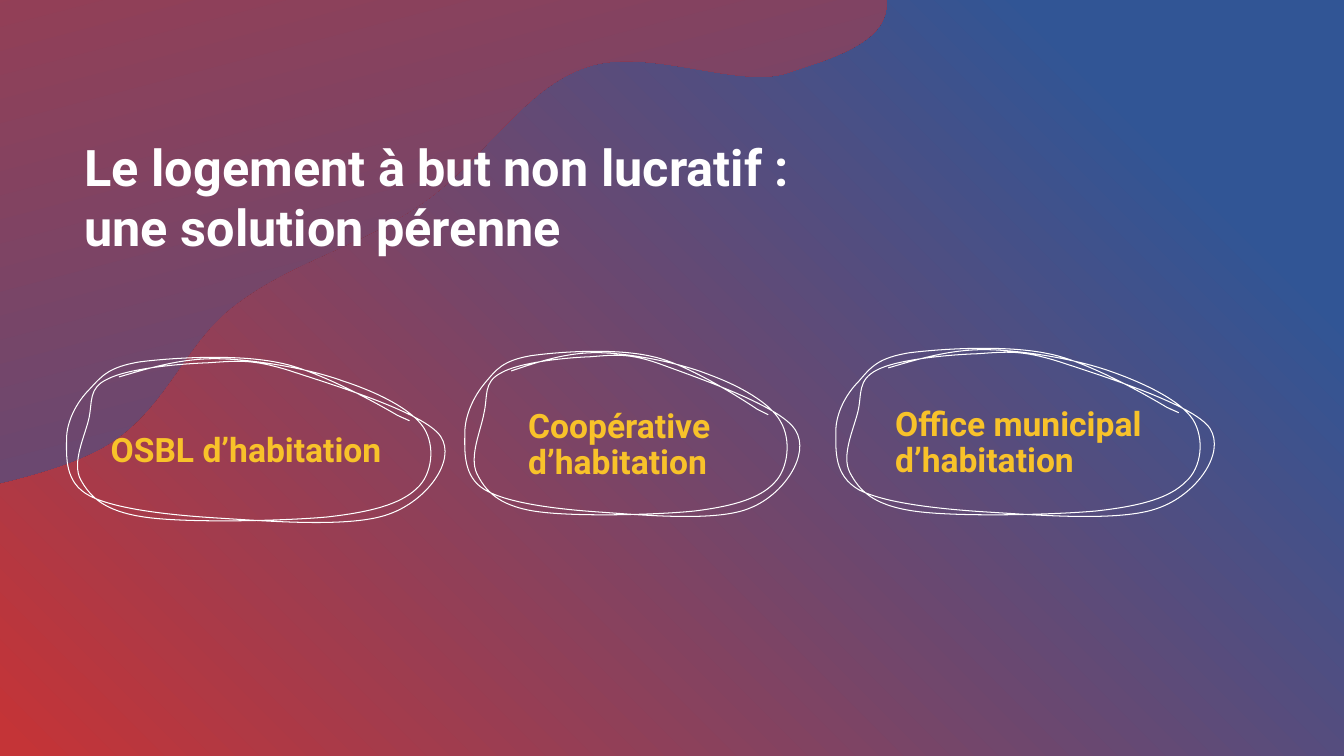
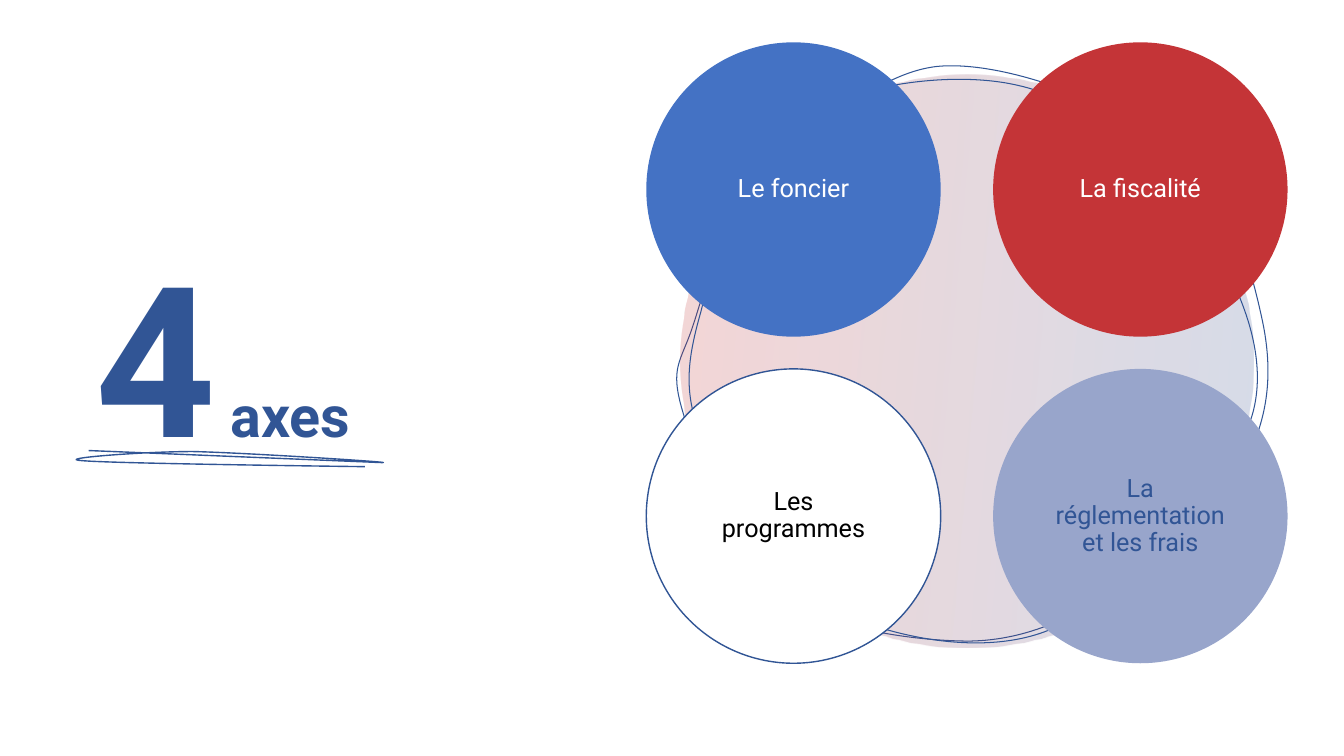
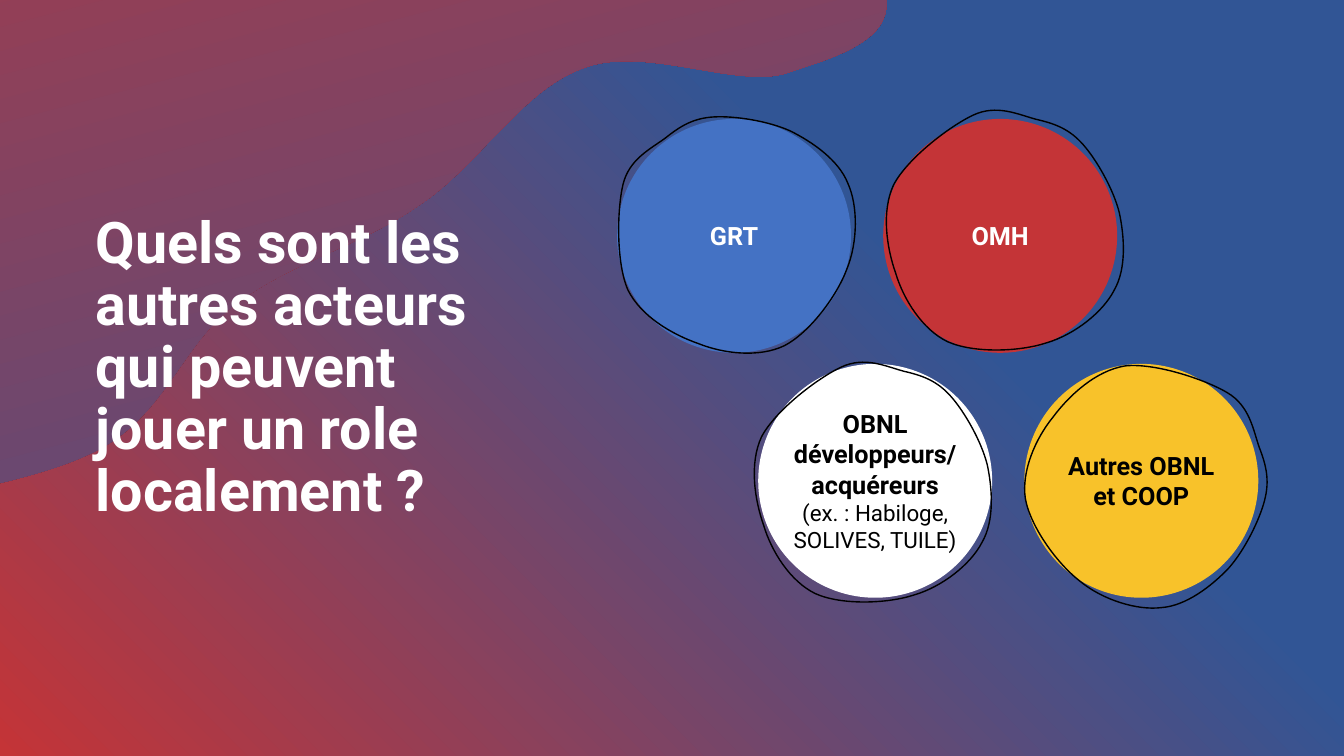
from math import cos, radians, sin

from pptx import Presentation
from pptx.dml.color import RGBColor
from pptx.enum.shapes import MSO_SHAPE
from pptx.enum.text import MSO_ANCHOR as Anchor, PP_ALIGN as Align
from pptx.oxml.ns import qn
from pptx.oxml.xmlchemy import OxmlElement
from pptx.util import Inches, Pt

NAVY = RGBColor(0x31, 0x55, 0x95)
BLUE = RGBColor(0x44, 0x72, 0xC4)
RED = RGBColor(0xC4, 0x34, 0x37)
YELLOW = RGBColor(0xF8, 0xC2, 0x2A)
LAVENDER = RGBColor(0x98, 0xA5, 0xCB)
WHITE = RGBColor(0xFF, 0xFF, 0xFF)
BLACK = RGBColor(0x00, 0x00, 0x00)
FONT = "Roboto"
PANEL = [Inches(n) for n in (0.85, 1.18, 4.97, 4.97)]

# Each outline is a start point followed by cubic curves of three points.
BLOB = [
    (-2.09, 5.08), (-1.55, 5.09), (0.15, 4.86), (0.89, 4.51),
    (1.63, 4.17), (1.78, 3.43), (2.33, 3.02), (2.88, 2.6), (3.59, 2.43), (4.17, 2.03),
    (4.75, 1.64), (5.18, 0.89), (5.79, 0.67), (6.39, 0.45), (7.33, 0.89), (7.81, 0.72),
    (8.29, 0.56), (9.13, 0.35), (8.65, -0.33), (8.18, -1.02), (6.12, -2.97), (4.98, -3.41),
    (3.85, -3.84), (3.09, -4.26), (1.87, -2.95), (0.64, -1.63), (-1.7, 3.14), (-2.36, 4.48),
    (-3.01, 5.81), (-2.63, 5.08), (-2.09, 5.08),
]
BLOB_ROTATION = 300.3
SCRIBBLE = [
    (0.53, 0.2), (0.84, 0.11), (1.16, 0.01), (1.53, 0.02), (1.9, 0.03), (2.42, 0.12), (2.75, 0.24),
    (3.09, 0.35), (3.43, 0.52), (3.55, 0.7), (3.67, 0.88), (3.64, 1.17), (3.48, 1.31),
    (3.32, 1.46), (3.04, 1.54), (2.59, 1.59), (2.14, 1.63), (1.18, 1.65), (0.78, 1.59),
    (0.37, 1.53), (0.24, 1.38), (0.15, 1.22), (0.06, 1.05), (0.19, 0.79), (0.23, 0.62),
    (0.27, 0.45), (0.22, 0.31), (0.42, 0.22), (0.61, 0.12), (1.11, 0.07), (1.41, 0.06),
    (1.71, 0.04), (1.85, 0.02), (2.23, 0.14), (2.62, 0.27), (3.56, 0.55), (3.72, 0.79),
    (3.88, 1.03), (3.58, 1.43), (3.21, 1.56), (2.84, 1.7), (2.01, 1.63), (1.51, 1.6),
    (1.02, 1.57), (0.49, 1.51), (0.24, 1.38), (-0.01, 1.25), (0.01, 1.0), (0.01, 0.82),
    (0.01, 0.64), (0.11, 0.45), (0.24, 0.32), (0.36, 0.19), (0.43, 0.1), (0.74, 0.05),
    (1.06, 0.01), (1.7, -0.03), (2.12, 0.06), (2.55, 0.14), (3.29, 0.58), (3.29, 0.58),
    (3.49, 0.67), (3.4, 0.63), (3.31, 0.59),
]
OUTER_LOOP = [
    (6.87, 3.24), (6.99, 2.88), (7.11, 2.34), (7.51, 1.91), (7.91, 1.48), (8.6, 0.74), (9.29, 0.66),
    (9.99, 0.59), (11.14, 1.06), (11.67, 1.48), (12.21, 1.9), (12.41, 2.67), (12.52, 3.18),
    (12.63, 3.7), (12.58, 4.14), (12.35, 4.58), (12.12, 5.01), (11.6, 5.51), (11.14, 5.8),
    (10.69, 6.1), (10.21, 6.35), (9.62, 6.36), (9.03, 6.36), (8.09, 6.22), (7.62, 5.84),
    (7.14, 5.46), (6.9, 4.51), (6.77, 4.08), (6.64, 3.64), (6.75, 3.6), (6.87, 3.24),
]
INNER_LOOP = [
    (6.95, 3.1), (7.09, 2.56), (7.34, 1.59), (7.87, 1.22), (8.4, 0.84), (9.45, 0.69), (10.11, 0.85),
    (10.77, 1), (11.47, 1.59), (11.85, 2.14), (12.23, 2.7), (12.64, 3.5), (12.4, 4.18),
    (12.17, 4.87), (11.14, 5.94), (10.43, 6.24), (9.73, 6.54), (8.74, 6.3), (8.16, 6),
    (7.59, 5.7), (7.19, 4.9), (6.99, 4.42), (6.78, 3.94), (6.8, 3.63), (6.95, 3.1),
]
UNDERLINE = [
    (0.88, 4.47), (0.88, 4.47), (3.79, 4.59), (3.79, 4.59), (3.96, 4.59), (2.4, 4.49), (1.91, 4.48),
    (1.41, 4.48), (0.53, 4.55), (0.81, 4.57), (1.1, 4.6), (3.62, 4.63), (3.62, 4.63),
]
RING = [
    (0.46, 0.21), (0.31, 0.32), (0.1, 0.42), (0.04, 0.67), (-0.02, 0.92), (-0.03, 1.45), (0.09, 1.72),
    (0.22, 1.98), (0.53, 2.16), (0.79, 2.25), (1.04, 2.35), (1.39, 2.39), (1.64, 2.27),
    (1.89, 2.14), (2.16, 1.78), (2.26, 1.51), (2.37, 1.24), (2.37, 0.88), (2.27, 0.66),
    (2.18, 0.43), (1.92, 0.25), (1.7, 0.14), (1.48, 0.04), (1.15, -0.01), (0.95, 0),
    (0.74, 0.01), (0.61, 0.09), (0.46, 0.21),
]


def draw_outline(slide, points, color, width, left=0, top=0, stretch_x=1, stretch_y=1):
    """Draw an unfilled curve through points given in inches from left and top."""
    spots = [(round(100 * (left + x * stretch_x)), round(100 * (top + y * stretch_y)))
             for x, y in points]
    builder = slide.shapes.build_freeform(*spots[0], scale=Inches(0.01))
    builder.add_line_segments(spots[1:], close=points[0] == points[-1])
    outline = builder.convert_to_shape()
    geometry = outline._element.find(".//" + qn("a:path"))
    segments = iter(geometry.findall(qn("a:lnTo")))
    for triple in zip(segments, segments, segments):
        curve = OxmlElement("a:cubicBezTo")
        triple[0].addprevious(curve)
        for segment in triple:
            curve.append(segment[0])
            geometry.remove(segment)
    outline.shadow.inherit = False
    outline.fill.background()
    outline.line.color.rgb = color
    outline.line.width = Pt(width)
    return outline


def write(shape, text, size, color, bold=False, align=Align.LEFT, spacing=0.9,
          anchor=Anchor.MIDDLE, tail=None):
    """Fill a shape with one paragraph; tail is a last run (text, size, bold)."""
    frame = shape.text_frame
    frame.word_wrap = True
    frame.vertical_anchor = anchor
    para = frame.paragraphs[0]
    para.text = text
    para.alignment = align
    para.line_spacing = spacing
    styles = [(span, size, bold) for span in para.runs]
    if tail:
        span = para.add_run()
        span.text = tail[0]
        styles.append((span, *tail[1:]))
    for span, span_size, span_bold in styles:
        span.font.name = FONT
        span.font.size = Pt(span_size)
        span.font.bold = span_bold
        span.font.color.rgb = color


deck = Presentation()
deck.slide_width, deck.slide_height = Inches(13.33), Inches(7.5)
housing, axes, actors = [deck.slides.add_slide(deck.slide_layouts[6]) for _ in range(3)]
gradients = []  # fill, clockwise angle, (position, colour) of both ends

# Blob and gradient background of the coloured slides
turn = complex(cos(radians(BLOB_ROTATION)), sin(radians(BLOB_ROTATION)))
upright = [complex(x, y) * turn.conjugate() for x, y in BLOB]
for slide, blue_at, red_at in ((housing, 0.15, 0.99), (actors, 0.33, 1)):
    gradients.append((slide.background.fill, 135, (blue_at, NAVY), (red_at, RED)))
    blob = draw_outline(slide, [(p.real, p.imag) for p in upright], NAVY, 1)
    center = complex(blob.left + blob.width / 2, blob.top + blob.height / 2) * turn
    blob.left = int(center.real - blob.width / 2)
    blob.top = int(center.imag - blob.height / 2)
    blob.rotation = BLOB_ROTATION
    blob.line.fill.background()
    gradients.append((blob.fill, 135, (0, RED), (0.97, NAVY)))

# Slide 1: three kinds of non-profit housing
title = housing.shapes.add_textbox(Inches(0.74), Inches(1.3), Inches(7.5), Inches(1.92))
write(title, "Le logement à but non lucratif :\nune solution pérenne", 36, WHITE, True,
      spacing=1, anchor=Anchor.TOP)
for text, label_left, label_middle, align, left, top, width, height in (
    ("OSBL d’habitation", 0.94, 4.48, Align.CENTER, 0.65, 3.54, 3.76, 1.64),
    ("Coopérative\nd’habitation", 5.14, 4.42, Align.LEFT, 4.6, 3.48, 3.33, 1.64),
    ("Office municipal\nd’habitation", 8.78, 4.4, Align.LEFT, 8.28, 3.45, 3.76, 1.67),
):
    label = housing.shapes.add_textbox(
        Inches(label_left), Inches(label_middle - 0.4), Inches(3), Inches(0.8))
    write(label, text, 24, YELLOW, True, align)
    draw_outline(housing, SCRIBBLE, WHITE, 0.75, left, top, width / 3.76, height / 1.64)

# Slide 2: four axes
axes.background.fill.solid()
axes.background.fill.fore_color.rgb = WHITE
draw_outline(axes, OUTER_LOOP, NAVY, 0.75)
halo = axes.shapes.add_shape(
    MSO_SHAPE.OVAL, Inches(6.75), Inches(0.74), Inches(5.68), Inches(5.68))
halo.shadow.inherit = False
halo.line.fill.background()
gradients.append((halo.fill, 185, (0, NAVY), (0.94, RED)))
write(axes.shapes.add_textbox(*PANEL), "4", 150, NAVY, True, tail=(" axes", 41, True))
draw_outline(axes, INNER_LOOP, NAVY, 0.75)
draw_outline(axes, UNDERLINE, NAVY, 1)

# Slide 3: question
write(actors.shapes.add_textbox(*PANEL),
      "Quels sont les autres acteurs\nqui peuvent\njouer un role localement ?", 41, WHITE, True)

# Discs of slides 2 and 3, two columns by two rows
examples = ("(ex. : Habiloge, SOLIVES, TUILE)", 16, False)
axis_discs = (
    ("Le foncier", BLUE, WHITE, None),
    ("La fiscalité", RED, WHITE, None),
    ("Les programmes", WHITE, BLACK, None),
    ("La réglementation et les frais", LAVENDER, NAVY, None),
)
actor_discs = (
    ("GRT", BLUE, WHITE, None),
    ("OMH", RED, WHITE, None),
    ("OBNL développeurs/acquéreurs ", WHITE, BLACK, examples),
    ("Autres OBNL et COOP", YELLOW, BLACK, None),
)
for slide, discs, left, top, size, column_step, row_step, row_shift, spacing in (
    (axes, axis_discs, 6.41, 0.42, 2.92, 3.44, 3.24, 0, 0.9),
    (actors, actor_discs, 6.12, 1.18, 2.32, 2.64, 2.43, 1.4, 1),
):
    for index, (text, color, ink, tail) in enumerate(discs):
        row, column = divmod(index, 2)
        disc = slide.shapes.add_shape(
            MSO_SHAPE.OVAL, Inches(left + column * column_step + row * row_shift),
            Inches(top + row * row_step), Inches(size), Inches(size))
        disc.shadow.inherit = False
        disc.fill.solid()
        disc.fill.fore_color.rgb = color
        disc.line.fill.background()
        if slide is axes and color == WHITE:
            disc.line.color.rgb = NAVY
            disc.line.width = Pt(1)
        write(disc, text, 18, ink, slide is actors, Align.CENTER, spacing, tail=tail)
        if slide is actors and row == 1:
            frame = disc.text_frame
            frame.margin_left = frame.margin_right = frame.margin_top = frame.margin_bottom = 0

for left, top, rotation in (
    (6.14, 1.16, 0), (8.78, 1.16, 51.5), (7.47, 3.66, 51.5), (10.17, 3.63, 107.4),
):
    ring = draw_outline(actors, RING, BLACK, 1, left, top)
    ring.rotation = rotation

for fill, clockwise, *ends in gradients:
    fill.gradient()
    fill.gradient_angle = 360 - clockwise
    for stop, (position, color) in zip(fill.gradient_stops, ends):
        stop.position = position
        stop.color.rgb = color
for color_element in halo._element.spPr.iter(qn("a:srgbClr")):
    alpha = OxmlElement("a:alpha")
    alpha.set("val", "20000")
    color_element.append(alpha)

deck.save("out.pptx")
